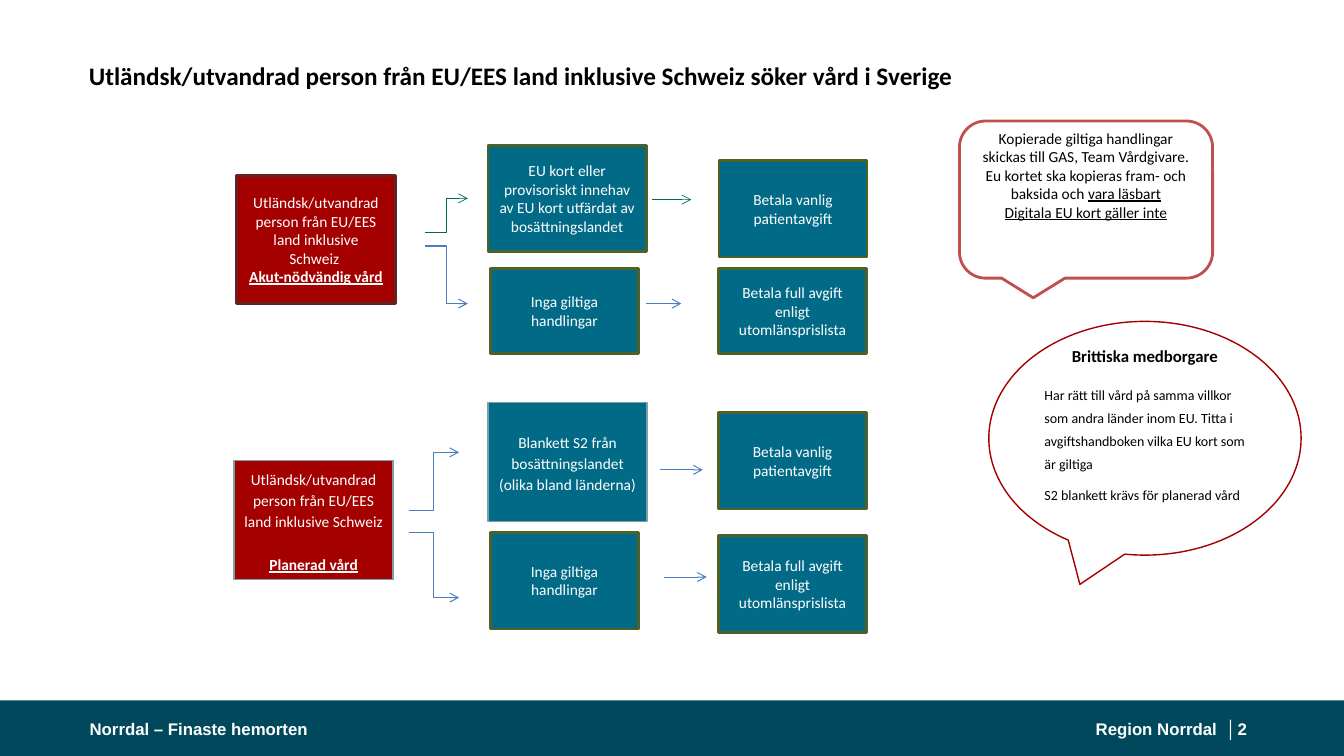
"""Build the slide on care in Sweden for patients from EU/EES countries and Switzerland."""
from dataclasses import dataclass

from lxml.etree import SubElement
from pptx import Presentation
from pptx.dml.color import RGBColor
from pptx.enum.shapes import MSO_CONNECTOR as Line, MSO_SHAPE as Preset
from pptx.enum.text import MSO_ANCHOR as Anchor, MSO_AUTO_SIZE as AutoSize, PP_ALIGN as Align
from pptx.oxml.ns import qn
from pptx.util import Cm, Pt


@dataclass(frozen=True)
class Theme:
    body_font: str = "Calibri"
    footer_font: str = "Arial"
    title_size: int = 18
    heading_size: int = 12
    box_size: int = 11
    note_size: int = 10
    white: str = "FFFFFF"
    black: str = "000000"
    footer: str = "00495D"
    teal: str = "006A87"
    red: str = "A40000"
    olive: str = "4E6128"
    maroon: str = "622423"
    grey: str = "79A0AB"
    coral: str = "C0504D"
    blue: str = "4B7EBC"
    green: str = "006858"


theme = Theme()


def add_shape(preset, place, fill, line=None, weight=1):
    """Add a flat preset shape at (left, top, width, height) in centimetres."""
    shape = slide.shapes.add_shape(preset, *map(Cm, place))
    shape.shadow.inherit = False
    shape.fill.solid()
    shape.fill.fore_color.rgb = RGBColor.from_string(fill)
    if line:
        shape.line.color.rgb = RGBColor.from_string(line)
        shape.line.width = Pt(weight)
    else:
        shape.line.fill.background()
    shape.text_frame.word_wrap = True
    shape.text_frame.vertical_anchor = Anchor.MIDDLE
    return shape


def style(paragraph, size, color, align=Align.CENTER, bold=False, font=theme.body_font):
    """Set the font and alignment of one paragraph."""
    paragraph.alignment = align
    paragraph.font.name = font
    paragraph.font.size = Pt(size)
    paragraph.font.bold = bold
    paragraph.font.color.rgb = RGBColor.from_string(color)


presentation = Presentation()
presentation.slide_width, presentation.slide_height = Cm(33.87), Cm(19.05)
slide = presentation.slides.add_slide(presentation.slide_layouts[5])

add_shape(Preset.RECTANGLE, (0, 17.65, 33.87, 1.4), theme.footer)
for left, width, text, align in (
    (27.18, 3.99, "Region Norrdal  │", Align.RIGHT),
    (2.26, 11.43, "Norrdal – Finaste hemorten", Align.LEFT),
    (31.19, 0.61, "2", Align.LEFT),
):
    frame = slide.shapes.add_textbox(Cm(left), Cm(17.93), Cm(width), Cm(0.89)).text_frame
    frame.margin_left = frame.margin_right = frame.margin_top = frame.margin_bottom = 0
    frame.word_wrap = True
    frame.vertical_anchor = Anchor.MIDDLE
    frame.text = text
    style(frame.paragraphs[0], theme.heading_size, theme.white, align, True, theme.footer_font)

title = slide.shapes.title
title.left, title.top, title.width, title.height = Cm(2.24), Cm(0.84), Cm(29.41), Cm(2.24)
frame = title.text_frame
frame.margin_left = frame.margin_right = frame.margin_top = frame.margin_bottom = 0
frame.auto_size = AutoSize.NONE
frame.vertical_anchor = Anchor.MIDDLE
frame.text = "Utländsk/utvandrad person från EU/EES land inklusive Schweiz söker vård i Sverige"
style(frame.paragraphs[0], theme.title_size, theme.black, Align.LEFT, True)
frame.paragraphs[0].line_spacing = 0.9

patient = "Utländsk/utvandrad person från EU/EES land inklusive Schweiz \v"
no_papers = "Inga giltiga handlingar"
normal_fee = "Betala vanlig patientavgift"
full_fee = "Betala full avgift enligt utomlänsprislista"
eu_card = "EU kort eller provisoriskt innehav av EU kort utfärdat av bosättningslandet"
s2_form = "Blankett S2 från bosättningslandet (olika bland länderna)"
for place, text, care, fill, line in (
    ((5.97, 4.42, 3.99, 3.23), patient, "Akut-nödvändig vård", theme.red, theme.maroon),
    ((12.3, 3.67, 3.99, 2.67), eu_card, "", theme.teal, theme.olive),
    ((18.12, 4.04, 3.73, 2.44), normal_fee, "", theme.teal, theme.olive),
    ((12.36, 6.77, 3.73, 2.13), no_papers, "", theme.teal, theme.olive),
    ((18.11, 6.77, 3.73, 2.13), full_fee, "", theme.teal, theme.olive),
    ((5.9, 11.61, 4.01, 3), patient, "Planerad vård", theme.red, theme.grey),
    ((12.3, 10.14, 4.01, 3), s2_form, "", theme.teal, theme.grey),
    ((18.11, 10.39, 3.73, 2.44), normal_fee, "", theme.teal, theme.olive),
    ((12.36, 13.41, 3.73, 2.44), no_papers, "", theme.teal, theme.olive),
    ((18.11, 13.5, 3.73, 2.44), full_fee, "", theme.teal, theme.olive),
):
    roomy = line == theme.grey
    box = add_shape(Preset.RECTANGLE, place, fill, line, 1 if roomy else 2)
    paragraph = box.text_frame.paragraphs[0]
    paragraph.text = text
    style(paragraph, theme.box_size, theme.white)
    if roomy:
        paragraph.line_spacing = 1.15
        paragraph.space_after = Pt(10)
    if care:
        run = paragraph.add_run()
        run.text = care
        run.font.bold = run.font.underline = True

for kind, start_x, start_y, end_x, end_y, color, weight in (
    (Line.ELBOW, 10.7, 5.85, 11.79, 5, theme.green, 0.5),
    (Line.ELBOW, 10.7, 6.2, 11.79, 7.65, theme.blue, 0.75),
    (Line.ELBOW, 10.3, 12.86, 11.57, 11.4, theme.blue, 0.75),
    (Line.ELBOW, 10.3, 13.41, 11.57, 15.06, theme.blue, 0.75),
    (Line.STRAIGHT, 16.43, 5.03, 17.42, 5.03, theme.green, 0.5),
    (Line.STRAIGHT, 16.29, 7.65, 17.17, 7.65, theme.blue, 0.75),
    (Line.STRAIGHT, 16.62, 11.84, 17.71, 11.84, theme.blue, 0.75),
    (Line.STRAIGHT, 16.74, 14.54, 17.81, 14.54, theme.blue, 0.75),
):
    arrow = slide.shapes.add_connector(kind, Cm(start_x), Cm(start_y), Cm(end_x), Cm(end_y))
    arrow.line.color.rgb = RGBColor.from_string(color)
    arrow.line.width = Pt(weight)
    properties = arrow._element.spPr
    SubElement(properties.find(qn("a:ln")), qn("a:tailEnd"), type="arrow")
    SubElement(properties, qn("a:effectLst"))

copies = add_shape(
    Preset.ROUNDED_RECTANGULAR_CALLOUT, (24.18, 3.05, 6.38, 3.96), theme.white, theme.coral, 2
)
frame = copies.text_frame
frame.vertical_anchor = Anchor.TOP
frame.margin_top = 0
frame.text = "\n".join((
    "Kopierade giltiga handlingar skickas till GAS, Team Vårdgivare.",
    "Eu kortet ska kopieras fram- och baksida och ",
    "",
))
for paragraph, underlined in zip(
    frame.paragraphs, ("", "vara läsbart", "Digitala EU kort gäller inte")
):
    style(paragraph, theme.box_size, theme.black)
    if underlined:
        run = paragraph.add_run()
        run.text = underlined
        run.font.underline = True

british = add_shape(Preset.OVAL_CALLOUT, (24.92, 8.1, 7.87, 5.89), theme.white, theme.red)
frame = british.text_frame
frame.margin_bottom = Cm(0.89)
frame.text = "\n".join((
    "Brittiska medborgare",
    "Har rätt till vård på samma villkor som andra länder inom EU. "
    "Titta i avgiftshandboken vilka EU kort som är giltiga",
    "S2 blankett krävs för planerad vård",
))
heading, *notes = frame.paragraphs
style(heading, theme.heading_size, theme.black, bold=True)
heading.line_spacing = 1.15
heading.space_after = Pt(10)
for paragraph in notes:
    style(paragraph, theme.note_size, theme.black, Align.LEFT)
    paragraph.line_spacing = Pt(16.5)
    paragraph.space_after = Pt(6)

presentation.save("out.pptx")
